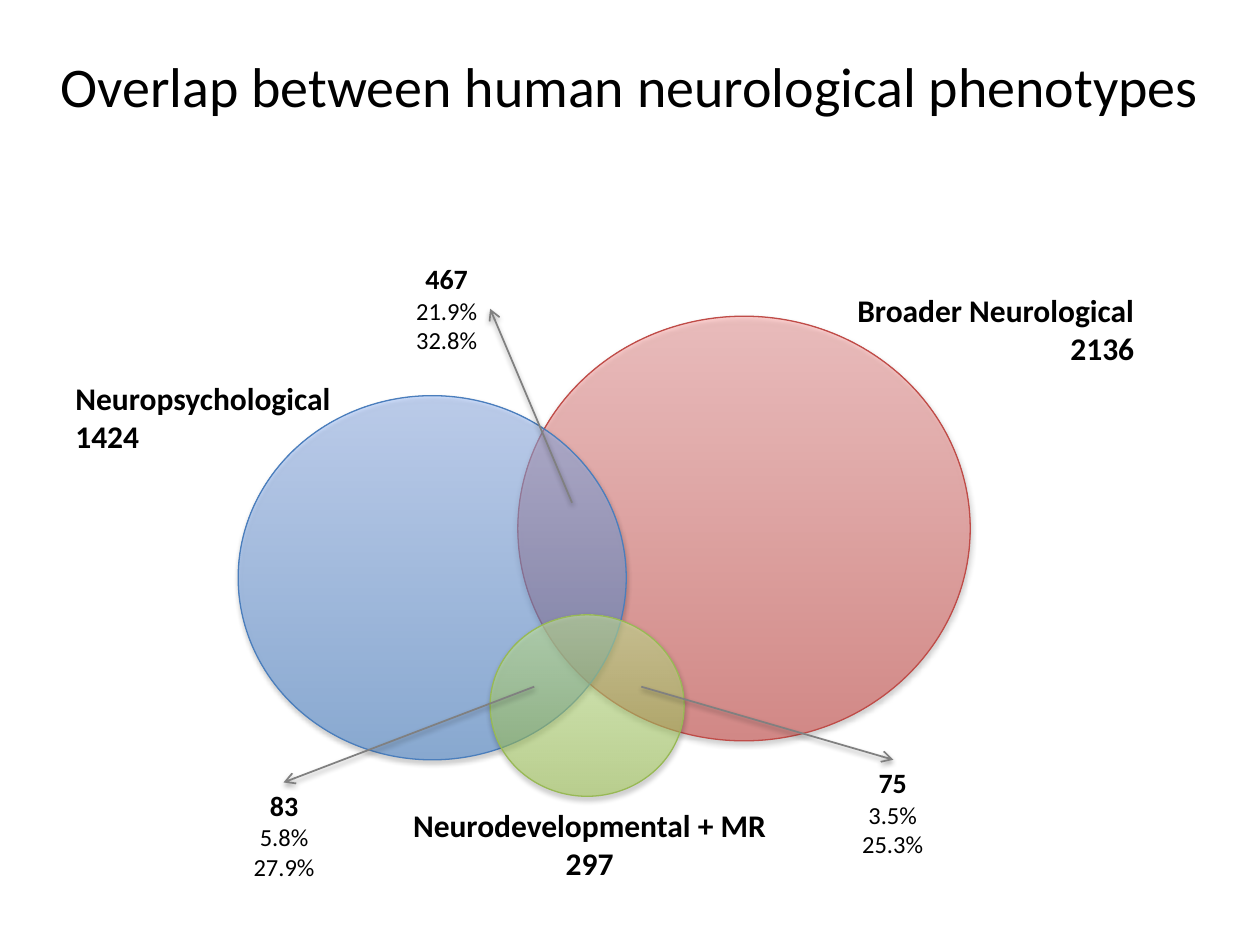
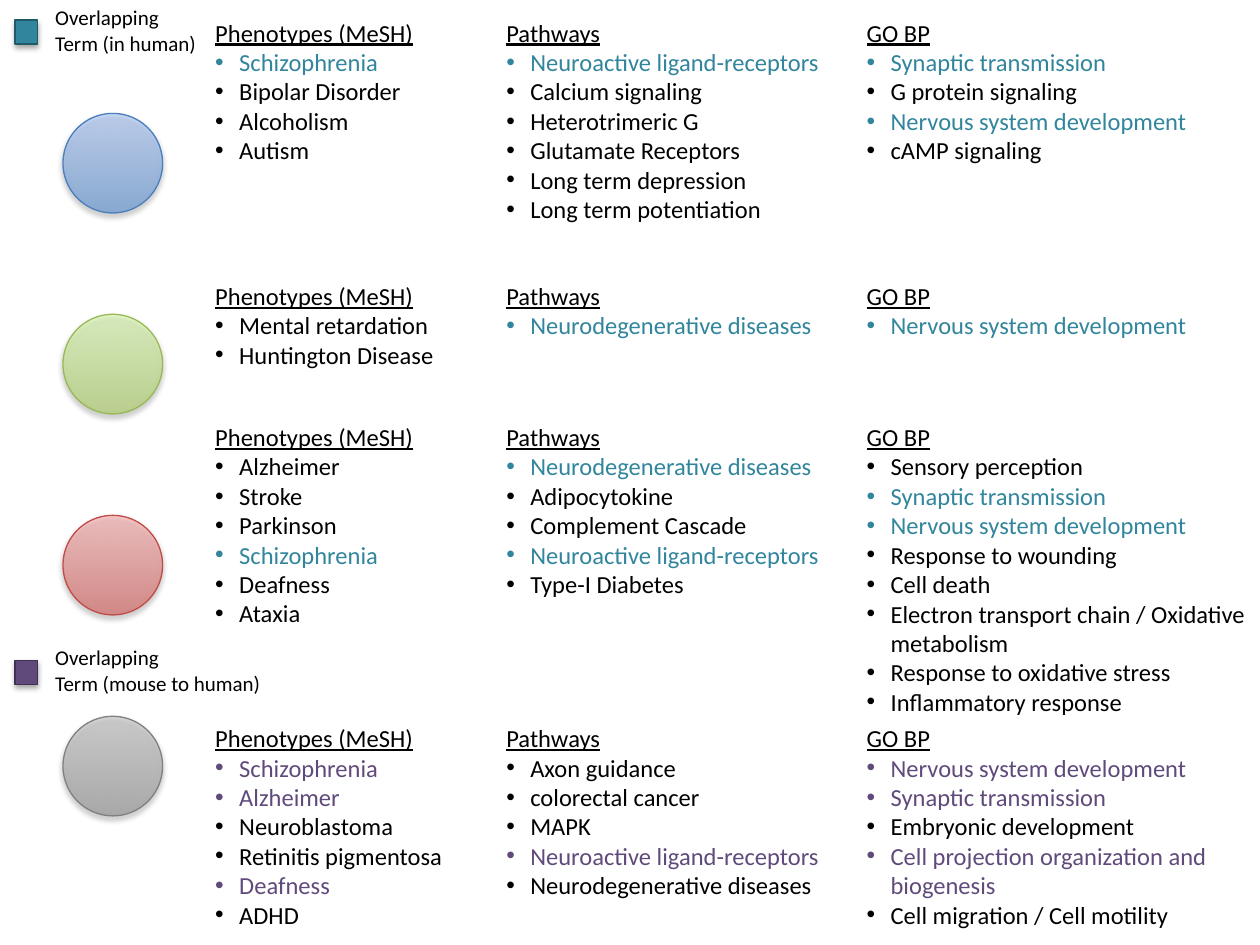
"""Build two slides on overlapping neurological phenotypes and their enriched terms."""
from dataclasses import dataclass
from math import ceil

from lxml.etree import SubElement
from pptx import Presentation
from pptx.dml.color import RGBColor
from pptx.enum.shapes import MSO_CONNECTOR, MSO_SHAPE
from pptx.enum.text import MSO_ANCHOR, MSO_AUTO_SIZE, PP_ALIGN
from pptx.oxml.ns import qn
from pptx.util import Inches, Pt


@dataclass(frozen=True)
class Theme:
    font: str = "Calibri"
    text: str = "000000"
    arrow: str = "808080"
    human: str = "31859C"
    human_edge: str = "215968"
    mouse: str = "604A7B"
    mouse_edge: str = "403152"
    title_size: int = 32
    group_size: int = 18
    count_size: int = 16
    list_size: int = 14
    key_size: int = 12


THEME = Theme()

CIRCLE_COLORS = {
    "neuropsychological": ("3F80CE", "A4C4FF", "4B7EBC"),
    "neurodevelopmental": ("A0CA4A", "DAFFA5", "98B955"),
    "neurological": ("D1403C", "FFA6A5", "BF4C48"),
    "mouse": ("808080", "BFBFBF", "808080"),
}

TITLE = "Overlap between human neurological phenotypes"
VENN_CIRCLES = [
    ("neurological", (4.11, 2.51, 3.59, 3.37)),
    ("neuropsychological", (1.89, 3.14, 3.08, 2.89)),
    ("neurodevelopmental", (3.89, 4.88, 1.54, 1.44)),
]
GROUP_LABELS = [
    (["Neuropsychological", "1424"], (0.5, 2.96, 2.37, 0.71), PP_ALIGN.LEFT),
    (["Broader Neurological", "2136"], (6.52, 2.26, 2.58, 0.71), PP_ALIGN.RIGHT),
    (["Neurodevelopmental + MR", "297"], (3.06, 6.35, 3.24, 0.71), PP_ALIGN.CENTER),
]
OVERLAPS = [
    ("467", ["21.9%", "32.8%"], (3.2, 2.03, 0.69, 0.84), (4.54, 3.99, 3.89, 2.45)),
    ("83", ["5.8%", "27.9%"], (1.89, 6.21, 0.73, 0.84), (4.24, 5.45, 2.25, 6.21)),
    ("75", ["3.5%", "25.3%"], (6.72, 6.03, 0.73, 0.84), (5.09, 5.45, 7.09, 6.03)),
]

HUMAN_TERMS = {"Schizophrenia", "Neuroactive ligand-receptors", "Neurodegenerative diseases",
               "Synaptic transmission", "Nervous system development"}
MOUSE_TERMS = {"Schizophrenia", "Alzheimer", "Deafness", "Neuroactive ligand-receptors",
               "Nervous system development", "Synaptic transmission",
               "Cell projection organization and biogenesis"}
KEYS = [
    (["Overlapping", "Term (in human)"], 0.16, 1.53, THEME.human, THEME.human_edge),
    (["Overlapping", "Term (mouse to human)"], 5.24, 1.93, THEME.mouse, THEME.mouse_edge),
]
COLUMNS = [
    ("Phenotypes (MeSH)", 1.61, 2.39, 27),
    ("Pathways", 3.92, 2.68, 27),
    ("GO BP", 6.78, 3.22, 32),
]
TERM_ROWS = [
    ("neuropsychological", 0.09, HUMAN_TERMS, THEME.human, [
        ["Schizophrenia", "Bipolar Disorder", "Alcoholism", "Autism"],
        ["Neuroactive ligand-receptors", "Calcium signaling", "Heterotrimeric G",
         "Glutamate Receptors", "Long term depression", "Long term potentiation"],
        ["Synaptic transmission", "G protein signaling", "Nervous system development",
         "cAMP signaling"],
    ]),
    ("neurodevelopmental", 2.18, HUMAN_TERMS, THEME.human, [
        ["Mental retardation", "Huntington Disease"],
        ["Neurodegenerative diseases"],
        ["Nervous system development"],
    ]),
    ("neurological", 3.3, HUMAN_TERMS, THEME.human, [
        ["Alzheimer", "Stroke", "Parkinson", "Schizophrenia", "Deafness", "Ataxia"],
        ["Neurodegenerative diseases", "Adipocytokine", "Complement Cascade",
         "Neuroactive ligand-receptors", "Type-I Diabetes"],
        ["Sensory perception", "Synaptic transmission", "Nervous system development",
         "Response to wounding", "Cell death",
         "Electron transport chain / Oxidative metabolism",
         "Response to oxidative stress", "Inflammatory response"],
    ]),
    ("mouse", 5.69, MOUSE_TERMS, THEME.mouse, [
        ["Schizophrenia", "Alzheimer", "Neuroblastoma", "Retinitis pigmentosa",
         "Deafness", "ADHD"],
        ["Axon guidance", "colorectal cancer", "MAPK", "Neuroactive ligand-receptors",
         "Neurodegenerative diseases"],
        ["Nervous system development", "Synaptic transmission", "Embryonic development",
         "Cell projection organization and biogenesis", "Cell migration / Cell motility"],
    ]),
]
CIRCLE_LEFT, CIRCLE_TOP, CIRCLE_STEP, CIRCLE_SIZE = 0.5, 0.9, 1.595, 0.79
LINE_HEIGHT, BOX_PADDING, BULLET_INDENT = 0.235, 0.1, 0.19


def inches(values):
    return [Inches(value) for value in values]


def write(paragraph, text, size, color=THEME.text, bold=False, underline=False,
          align=PP_ALIGN.LEFT, bullet=False):
    paragraph.alignment = align
    run = paragraph.add_run()
    run.text = text
    run.font.name = THEME.font
    run.font.size = Pt(size)
    run.font.bold = bold
    run.font.underline = underline
    run.font.color.rgb = RGBColor.from_string(color)
    if bullet:
        properties = paragraph._p.get_or_add_pPr()
        properties.set("marL", str(Inches(BULLET_INDENT)))
        properties.set("indent", str(-Inches(BULLET_INDENT)))
        SubElement(properties, qn("a:buFont"), typeface="Arial")
        SubElement(properties, qn("a:buChar"), char="•")


def add_text(slide, box, lines, wrap=True):
    frame = slide.shapes.add_textbox(*inches(box)).text_frame
    frame.word_wrap = wrap
    frame.auto_size = MSO_AUTO_SIZE.SHAPE_TO_FIT_TEXT
    for index, (text, style) in enumerate(lines):
        paragraph = frame.add_paragraph() if index else frame.paragraphs[0]
        write(paragraph, text, **style)


def add_shadow(properties, distance, opacity):
    effects = properties.find(qn("a:effectLst"))
    if effects is None:
        effects = SubElement(properties, qn("a:effectLst"))
    shadow = SubElement(effects, qn("a:outerShdw"), blurRad=str(Pt(3.1)),
                        dist=str(Pt(distance)), dir="5400000", rotWithShape="0")
    black = SubElement(shadow, qn("a:srgbClr"), val="000000")
    SubElement(black, qn("a:alpha"), val=str(opacity * 1000))


def outline(shape, edge):
    shape.line.color.rgb = RGBColor.from_string(edge)
    shape.line.width = Pt(0.75)
    shape.shadow.inherit = False
    add_shadow(shape._element.spPr, 1.8, 35)


def add_circle(slide, group, box):
    dark, light, edge = CIRCLE_COLORS[group]
    circle = slide.shapes.add_shape(MSO_SHAPE.OVAL, *inches(box))
    circle.fill.gradient()
    circle.fill.gradient_angle = 90
    for stop, color, position in zip(circle.fill.gradient_stops, (dark, light), (0, 1)):
        stop.color.rgb = RGBColor.from_string(color)
        stop.position = position
    for color in list(circle._element.spPr.iter(qn("a:srgbClr"))):
        SubElement(color, qn("a:alpha"), val="50000")
    outline(circle, edge)


def add_arrow(slide, ends):
    arrow = slide.shapes.add_connector(MSO_CONNECTOR.STRAIGHT, *inches(ends))
    arrow.line.color.rgb = RGBColor.from_string(THEME.arrow)
    arrow.line.width = Pt(1)
    properties = arrow._element.spPr
    SubElement(properties.find(qn("a:ln")), qn("a:tailEnd"), type="arrow")
    add_shadow(properties, 1.6, 38)


def add_key(slide, lines, top, width, color, edge):
    swatch = slide.shapes.add_shape(MSO_SHAPE.RECTANGLE, *inches((0.12, top, 0.18, 0.19)))
    swatch.fill.solid()
    swatch.fill.fore_color.rgb = RGBColor.from_string(color)
    outline(swatch, edge)
    add_text(slide, (0.34, top - 0.17, width, 0.5),
             [(line, dict(size=THEME.key_size)) for line in lines])


def build_overlap_slide(deck):
    slide = deck.slides.add_slide(deck.slide_layouts[5])
    title = slide.shapes.title
    title.left, title.top, title.width, title.height = inches((0, 0.3, 10, 0.75))
    title.text_frame.vertical_anchor = MSO_ANCHOR.MIDDLE
    write(title.text_frame.paragraphs[0], TITLE, THEME.title_size, align=PP_ALIGN.CENTER)
    for group, box in VENN_CIRCLES:
        add_circle(slide, group, box)
    for lines, box, align in GROUP_LABELS:
        style = dict(size=THEME.group_size, bold=True, align=align)
        add_text(slide, box, [(line, style) for line in lines])
    for count, shares, box, ends in OVERLAPS:
        count_style = dict(size=THEME.count_size, bold=True, align=PP_ALIGN.CENTER)
        share_style = dict(size=THEME.list_size, align=PP_ALIGN.CENTER)
        add_text(slide, box, [(count, count_style)] + [(share, share_style) for share in shares],
                 wrap=False)
        add_arrow(slide, ends)


def build_terms_slide(deck):
    slide = deck.slides.add_slide(deck.slide_layouts[6])
    for index, (group, top, shared_terms, highlight, term_lists) in enumerate(TERM_ROWS):
        add_circle(slide, group, (CIRCLE_LEFT, CIRCLE_TOP + index * CIRCLE_STEP,
                                  CIRCLE_SIZE, CIRCLE_SIZE))
        for (heading, left, width, line_chars), terms in zip(COLUMNS, term_lists):
            lines = [(heading, dict(size=THEME.list_size, underline=True))]
            for term in terms:
                color = highlight if term in shared_terms else THEME.text
                lines.append((term, dict(size=THEME.list_size, color=color, bullet=True)))
            line_count = sum(ceil(len(text) / line_chars) for text, _ in lines)
            add_text(slide, (left, top, width, BOX_PADDING + line_count * LINE_HEIGHT), lines)
    for key in KEYS:
        add_key(slide, *key)


def main():
    deck = Presentation()
    deck.slide_width, deck.slide_height = inches((10, 7.5))
    build_overlap_slide(deck)
    build_terms_slide(deck)
    deck.save("out.pptx")


if __name__ == "__main__":
    main()
